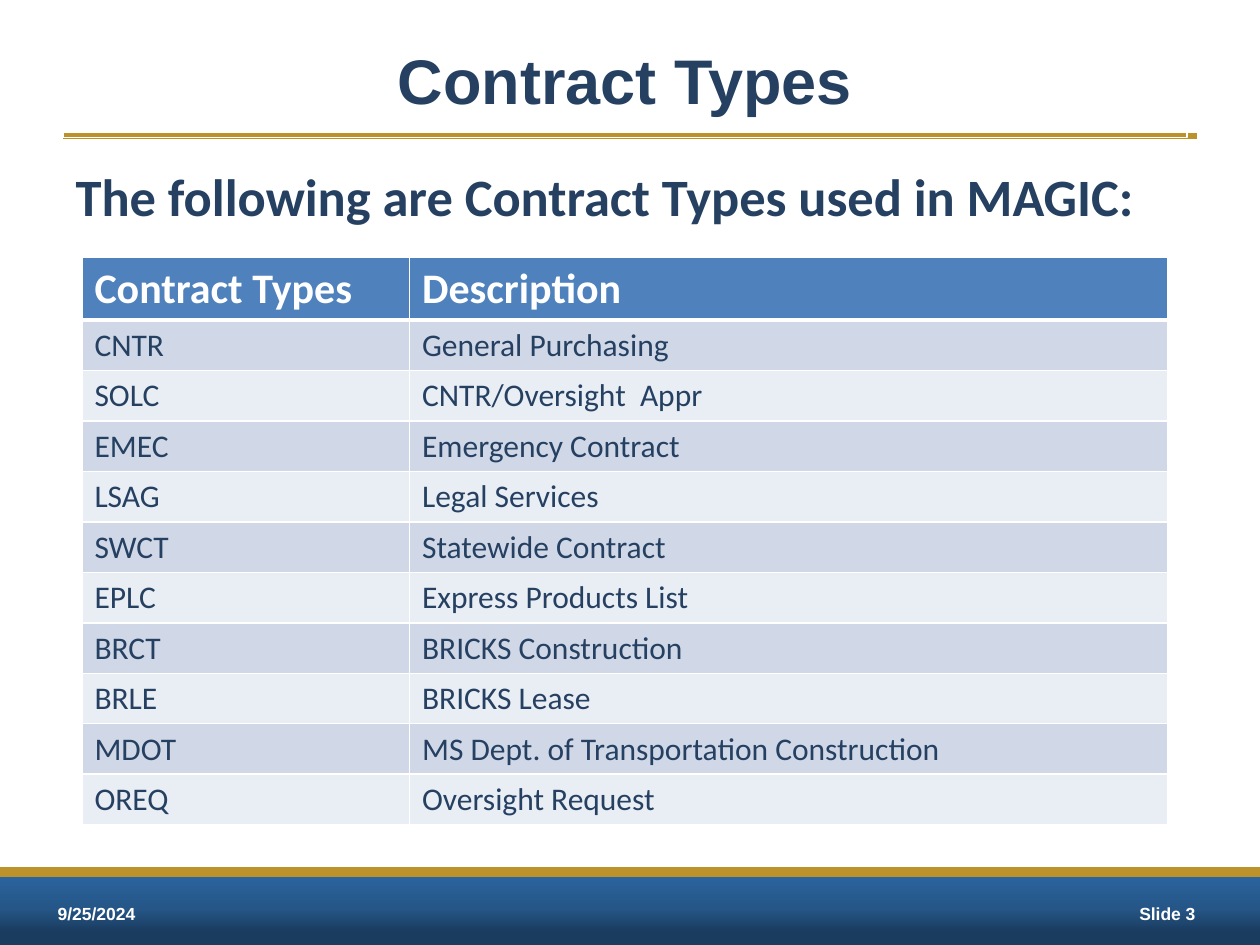
import dataclasses

import lxml.etree
import pptx
import pptx.dml.color
import pptx.enum.shapes
import pptx.enum.text
import pptx.oxml
import pptx.oxml.ns
import pptx.util

Inches = pptx.util.Inches
Pt = pptx.util.Pt
WIDTH, HEIGHT = 10, 7.5
BAND_TOP = 6.92
NAMESPACE = pptx.oxml.ns.nsdecls("a")


@dataclasses.dataclass(frozen=True)
class Theme:
    """Colours, fonts and type sizes of the slide."""
    navy: str = "254061"
    white: str = "FFFFFF"
    gold: str = "BD922A"
    header: str = "4F81BD"
    stripes: tuple = ("D0D8E8", "E9EDF4")
    band: tuple = ((18, "1A3C5F"), (50, "255687"), (100, "2B66A1"))
    heading_font: str = "Arial"
    body_font: str = "Calibri"
    title_size: int = 36
    intro_size: int = 30
    header_size: int = 24
    cell_size: int = 18
    footer_size: int = 10


THEME = Theme()
ROWS = [
    ("Contract Types", "Description"),
    ("CNTR", "General Purchasing"),
    ("SOLC", "CNTR/Oversight  Appr"),
    ("EMEC", "Emergency Contract"),
    ("LSAG", "Legal Services"),
    ("SWCT", "Statewide Contract"),
    ("EPLC", "Express Products List"),
    ("BRCT", "BRICKS Construction"),
    ("BRLE", "BRICKS Lease"),
    ("MDOT", "MS Dept. of Transportation Construction"),
    ("OREQ", "Oversight Request"),
]


def color(value):
    """Return a colour object for a hex value."""
    return pptx.dml.color.RGBColor.from_string(value)


def write(frame, text, size, font=THEME.body_font, fill=THEME.navy, bold=True,
          align=pptx.enum.text.PP_ALIGN.LEFT, anchor=None, before=0):
    """Write one formatted paragraph into a text frame and return it."""
    frame.word_wrap = True
    if anchor is not None:
        frame.vertical_anchor = anchor
    paragraph = frame.paragraphs[0]
    paragraph.alignment = align
    paragraph.space_before = Pt(before)
    run = paragraph.add_run()
    run.text = text
    run.font.name = font
    run.font.size = Pt(size)
    run.font.bold = bold
    run.font.color.rgb = color(fill)
    return paragraph


def place(shape, left, top, width, height):
    """Move and size a shape in inches."""
    shape.left, shape.top = Inches(left), Inches(top)
    shape.width, shape.height = Inches(width), Inches(height)


def add_rule(slide, left, right, top, weight):
    """Draw a horizontal gold rule and return it."""
    rule = slide.shapes.add_connector(
        pptx.enum.shapes.MSO_CONNECTOR.STRAIGHT,
        Inches(left), Inches(top), Inches(right), Inches(top))
    rule.line.color.rgb = color(THEME.gold)
    rule.line.width = Pt(weight)
    lxml.etree.SubElement(rule.element.spPr, pptx.oxml.ns.qn("a:effectLst"))
    return rule


def add_band(slide):
    """Draw the gradient band along the foot of the slide."""
    band = slide.shapes.add_shape(
        pptx.enum.shapes.MSO_SHAPE.RECTANGLE, 0, Inches(BAND_TOP),
        Inches(WIDTH), Inches(HEIGHT - BAND_TOP))
    band.shadow.inherit = False
    band.line.fill.background()
    band.fill.gradient()
    stops = "".join(
        f'<a:gs pos="{share * 1000}"><a:srgbClr val="{value}"/></a:gs>'
        for share, value in THEME.band)
    gradient = pptx.oxml.parse_xml(
        f'<a:gradFill {NAMESPACE} rotWithShape="1"><a:gsLst>{stops}</a:gsLst>'
        '<a:lin ang="16200000" scaled="0"/></a:gradFill>')
    properties = band.element.spPr
    properties.replace(properties.find(pptx.oxml.ns.qn("a:gradFill")), gradient)


def add_footer(slide, date, number):
    """Write the date at the left and the slide number at a right tab."""
    box = slide.shapes.add_textbox(0, 0, 0, 0)
    place(box, 0.36, 7.05, 9.24, 0.4)
    paragraph = write(
        box.text_frame, f"{date}\t{number}", THEME.footer_size,
        font=THEME.heading_font, fill=THEME.white,
        anchor=pptx.enum.text.MSO_ANCHOR.MIDDLE)
    paragraph._p.get_or_add_pPr().append(pptx.oxml.parse_xml(
        f'<a:tabLst {NAMESPACE}><a:tab pos="{Inches(9.03)}" algn="r"/></a:tabLst>'))


def add_borders(cell, top, bottom):
    """Give a cell white borders, with its own top and bottom weights."""
    weights = {"L": 1, "R": 1, "T": top, "B": bottom}
    for index, (side, weight) in enumerate(weights.items()):
        cell._tc.get_or_add_tcPr().insert(index, pptx.oxml.parse_xml(
            f'<a:ln{side} {NAMESPACE} w="{Pt(weight)}"><a:solidFill>'
            f'<a:srgbClr val="{THEME.white}"/></a:solidFill></a:ln{side}>'))


def add_contract_table(slide):
    """Build the striped table of contract types."""
    widths = (2.6, 6.02)
    heights = [0.49] + [0.4] * (len(ROWS) - 1)
    table = slide.shapes.add_table(
        len(ROWS), len(widths), Inches(0.65), Inches(2.04),
        Inches(sum(widths)), Inches(sum(heights))).table
    for column, width in zip(table.columns, widths):
        column.width = Inches(width)
    for index, texts in enumerate(ROWS):
        table.rows[index].height = Inches(heights[index])
        header = index == 0
        for column, text in enumerate(texts):
            cell = table.cell(index, column)
            cell.fill.solid()
            cell.fill.fore_color.rgb = color(
                THEME.header if header else THEME.stripes[(index - 1) % 2])
            add_borders(cell, top=3 if index == 1 else 1, bottom=3 if header else 1)
            write(cell.text_frame, text, bold=header,
                  size=THEME.header_size if header else THEME.cell_size,
                  fill=THEME.white if header else THEME.navy)


def fill_placeholders(slide):
    """Write the title and the introduction into their placeholders."""
    title, body = slide.shapes.title, slide.placeholders[1]
    place(title, 0.5, 0.17, 8.92, 0.92)
    title.line.color.rgb = color(THEME.white)
    title.line.width = Pt(0.75)
    write(title.text_frame, "Contract Types", THEME.title_size,
          font=THEME.heading_font, align=pptx.enum.text.PP_ALIGN.CENTER,
          anchor=pptx.enum.text.MSO_ANCHOR.MIDDLE)
    place(body, 0.5, 1.25, 9, 5.29)
    paragraph = write(body.text_frame, "The following are Contract Types used in MAGIC:",
                      THEME.intro_size, before=6)
    properties = paragraph._p.get_or_add_pPr()
    properties.set("marL", "0")
    properties.set("indent", "0")
    lxml.etree.SubElement(properties, pptx.oxml.ns.qn("a:buNone"))


def main():
    """Build and save the slide."""
    presentation = pptx.Presentation()
    presentation.slide_width = Inches(WIDTH)
    presentation.slide_height = Inches(HEIGHT)
    slide = presentation.slides.add_slide(presentation.slide_layouts[1])
    fill_placeholders(slide)
    title_rule = add_rule(slide, 0.5, 9.5, 1.08, 3)
    slide.shapes.title.element.addprevious(title_rule.element)
    add_band(slide)
    add_footer(slide, "9/25/2024", "Slide 3")
    add_rule(slide, 0, WIDTH, BAND_TOP, 6)
    add_contract_table(slide)
    presentation.save("out.pptx")


if __name__ == "__main__":
    main()
